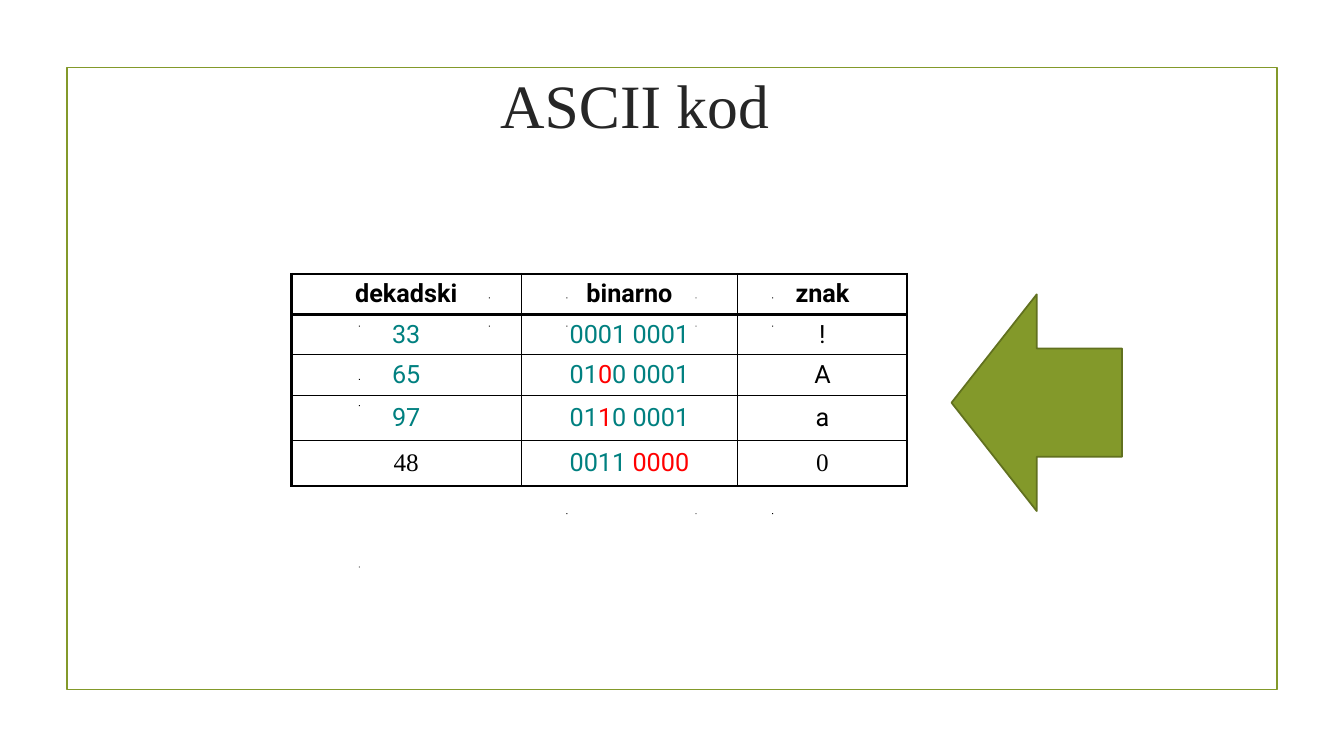
from dataclasses import dataclass

from lxml import etree
from pptx import Presentation
from pptx.dml.color import RGBColor
from pptx.enum.shapes import MSO_SHAPE
from pptx.enum.text import MSO_ANCHOR, PP_ALIGN
from pptx.oxml.ns import qn
from pptx.util import Inches, Pt

RECTANGLE = MSO_SHAPE.RECTANGLE
LEFT_ARROW = MSO_SHAPE.LEFT_ARROW
MIDDLE = MSO_ANCHOR.MIDDLE
CENTER = PP_ALIGN.CENTER


@dataclass(frozen=True)
class Theme:
    green: str = "83992A"
    dark_green: str = "61711F"
    ink: str = "262626"
    black: str = "000000"
    teal: str = "008080"
    red: str = "FF0000"
    serif: str = "Times New Roman"
    sans: str = "Roboto"
    title_size: int = 44
    table_size: int = 18
    outline: float = 1.25
    heavy: float = 2
    medium: float = 1
    thin: float = 0.75


@dataclass(frozen=True)
class Span:
    text: str
    color: str
    font: str
    size: int
    bold: bool = False


class SlideBuilder:
    """Draws on one slide, measured on a grid of 40 columns and 30 rows."""

    def __init__(self, deck, theme):
        self.theme = theme
        self.slide = deck.slides.add_slide(deck.slide_layouts[6])
        self.column = deck.slide_width / 40
        self.row = deck.slide_height / 30

    def place(self, left, top, width, height):
        """Turn grid units into slide lengths."""
        return (round(left * self.column), round(top * self.row),
                round(width * self.column), round(height * self.row))

    def shape(self, kind, area, fill=None, line=None):
        shape = self.slide.shapes.add_shape(kind, *self.place(*area))
        shape.shadow.inherit = False
        if fill:
            shape.fill.solid()
            shape.fill.fore_color.rgb = RGBColor.from_string(fill)
        else:
            shape.fill.background()
        if line:
            shape.line.color.rgb = RGBColor.from_string(line)
            shape.line.width = Pt(self.theme.outline)
        else:
            shape.line.fill.background()

    def add_spans(self, frame, spans):
        para = frame.paragraphs[0]
        para.alignment = CENTER
        for span in spans:
            run = para.add_run()
            run.text = span.text
            run.font.name = span.font
            run.font.size = Pt(span.size)
            run.font.bold = span.bold
            run.font.color.rgb = RGBColor.from_string(span.color)

    def text(self, area, spans):
        box = self.slide.shapes.add_textbox(*self.place(*area))
        box.text_frame.word_wrap = True
        box.text_frame.vertical_anchor = MIDDLE
        self.add_spans(box.text_frame, spans)

    def border(self, cell, side, width):
        properties = cell._tc.get_or_add_tcPr()
        line = etree.SubElement(properties, qn(f"a:ln{side}"), w=str(Pt(width)))
        fill = etree.SubElement(line, qn("a:solidFill"))
        etree.SubElement(fill, qn("a:srgbClr"), val=self.theme.black)

    def table(self, left, top, widths, heights, rows):
        theme = self.theme
        area = self.place(left, top, sum(widths), sum(heights))
        table = self.slide.shapes.add_table(len(heights), len(widths), *area).table
        table.first_row = table.horz_banding = False
        for column, width in zip(table.columns, widths):
            column.width = round(width * self.column)
        for row, height in zip(table.rows, heights):
            row.height = round(height * self.row)

        vertical = [theme.heavy, *[theme.medium] * (len(widths) - 1), theme.heavy]
        horizontal = [theme.heavy, theme.heavy,
                      *[theme.thin] * (len(heights) - 2), theme.heavy]
        for r, row in enumerate(rows):
            for c, spans in enumerate(row):
                cell = table.cell(r, c)
                cell.vertical_anchor = MIDDLE
                self.add_spans(cell.text_frame, spans)
                for side, width in (("L", vertical[c]), ("R", vertical[c + 1]),
                                    ("T", horizontal[r]), ("B", horizontal[r + 1])):
                    self.border(cell, side, width)
                cell.fill.background()


def ascii_rows(theme):
    def span(text, color=theme.black, font=theme.sans, bold=False):
        return Span(text, color, font, theme.table_size, bold)

    def teal(text):
        return span(text, theme.teal)

    def red(text):
        return span(text, theme.red)

    return [
        [[span(name, bold=True)] for name in ("dekadski", "binarno", "znak")],
        [[teal("33")], [teal("0001 0001")], [span("!")]],
        [[teal("65")], [teal("01"), red("0"), teal("0 0001")], [span("A")]],
        [[teal("97")], [teal("01"), red("1"), teal("0 0001")], [span("a")]],
        [[span("48", font=theme.serif)], [teal("0011 "), red("0000")],
         [span("0", font=theme.serif)]],
    ]


def main():
    deck = Presentation()
    deck.slide_width, deck.slide_height = Inches(13.33), Inches(7.5)
    theme = Theme()
    page = SlideBuilder(deck, theme)

    page.shape(RECTANGLE, (2, 2.68, 36, 24.68), line=theme.green)
    page.text((0.39, 1.64, 37, 5),
              [Span("ASCII kod", theme.ink, theme.serif, theme.title_size)])
    page.table(8.67, 10.88, (6.84, 6.45, 5.04), (1.6, 1.6, 1.6, 1.8, 1.8),
               ascii_rows(theme))

    dot_columns = (10.68, 14.55, 16.86, 20.7, 22.98)
    dot_rows = {11.8: dot_columns, 12.92: dot_columns,
                15.04: dot_columns[:1], 16.08: dot_columns[:1],
                19.28: dot_columns[2:], 20.36: dot_columns[2:],
                22.48: dot_columns[:1]}
    for top, lefts in dot_rows.items():
        for left in lefts:
            page.shape(RECTANGLE, (left, top, 0.03, 0.04), fill=theme.black)

    page.shape(LEFT_ARROW, (28.32, 11.68, 5.07, 8.6),
               fill=theme.green, line=theme.dark_green)
    deck.save("out.pptx")


if __name__ == "__main__":
    main()
